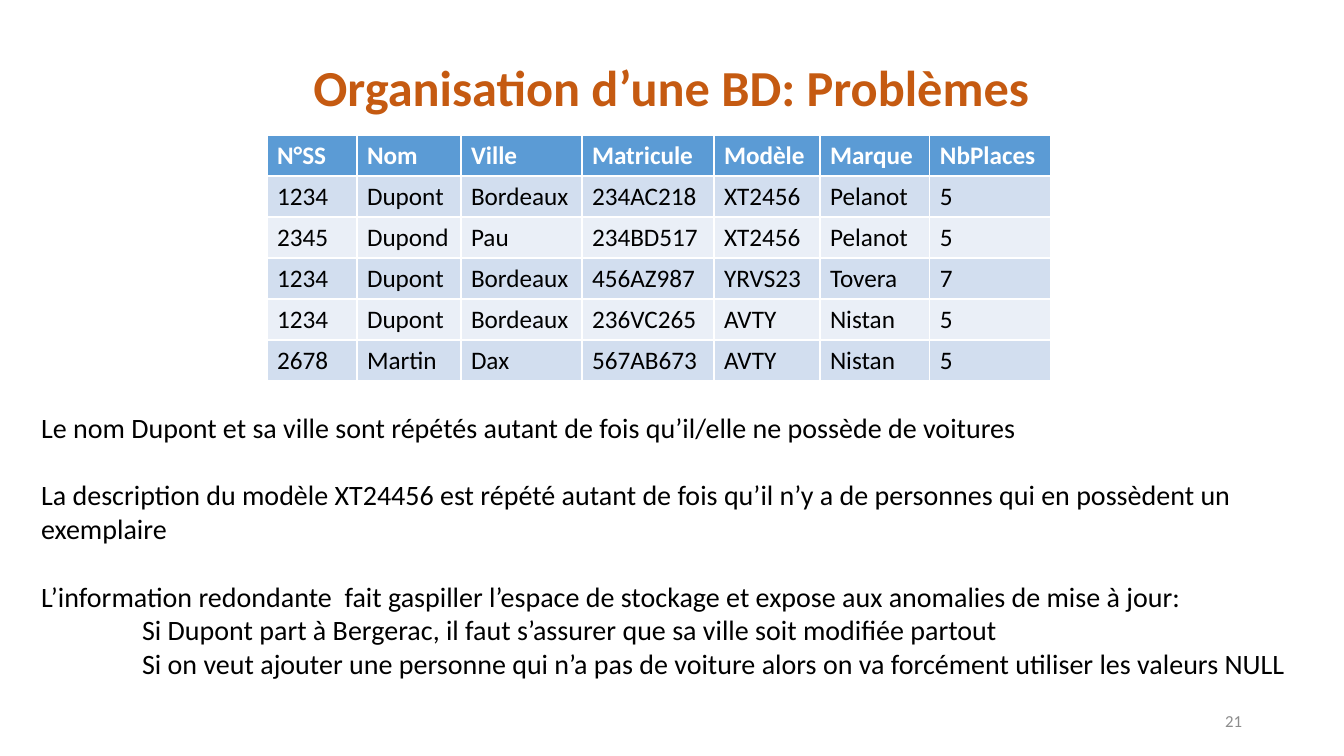
import pptx
import pptx.dml.color
import pptx.enum.text
import pptx.util
from lxml import etree

RGBColor = pptx.dml.color.RGBColor
PP_ALIGN = pptx.enum.text.PP_ALIGN
MSO_ANCHOR = pptx.enum.text.MSO_ANCHOR

WHITE = RGBColor(0xFF, 0xFF, 0xFF)
BLACK = RGBColor(0x00, 0x00, 0x00)
GREY = RGBColor(0x8C, 0x8C, 0x8C)
RUST = RGBColor(0xC5, 0x5A, 0x11)
HEADER_BLUE = RGBColor(0x5B, 0x9B, 0xD5)
BAND_DARK = RGBColor(0xD2, 0xDE, 0xEF)
BAND_LIGHT = RGBColor(0xEA, 0xEF, 0xF7)

CARS = [
    ("N°SS", "Nom", "Ville", "Matricule", "Modèle", "Marque", "NbPlaces"),
    ("1234", "Dupont", "Bordeaux", "234AC218", "XT2456", "Pelanot", "5"),
    ("2345", "Dupond", "Pau", "234BD517", "XT2456", "Pelanot", "5"),
    ("1234", "Dupont", "Bordeaux", "456AZ987", "YRVS23", "Tovera", "7"),
    ("1234", "Dupont", "Bordeaux", "236VC265", "AVTY", "Nistan", "5"),
    ("2678", "Martin", "Dax", "567AB673", "AVTY", "Nistan", "5"),
]
COLUMN_WIDTHS = [90, 104, 121, 132, 106, 110, 121]
ROW_HEIGHT = 41

# Each remark: text, left indent in px, space after in points
REMARKS = [
    ("Le nom Dupont et sa ville sont répétés autant de fois qu’il/elle "
     "ne possède de voitures", 0, 24.4),
    ("La description du modèle XT24456 est répété autant de fois qu’il n’y a "
     "de personnes qui en possèdent un exemplaire", 0, 24.4),
    ("L’information redondante  fait gaspiller l’espace de stockage et expose "
     "aux anomalies de mise à jour:", 0, 0),
    ("Si Dupont part à Bergerac, il faut s’assurer que sa ville soit "
     "modifiée partout", 101, 0),
    ("Si on veut ajouter une personne qui n’a pas de voiture alors on va "
     "forcément utiliser les valeurs NULL", 101, 0),
]


def px(count):
    return pptx.util.Inches(count / 100.8)


class SlideBuilder:
    font = "Calibri"

    def __init__(self, page):
        self.page = page

    def style(self, para, size, color, bold=False):
        for span in para.runs:
            span.font.name = self.font
            span.font.size = pptx.util.Pt(size)
            span.font.bold = bold
            span.font.color.rgb = color

    def place(self, box, left, top, width, height):
        box.left, box.top = px(left), px(top)
        box.width, box.height = px(width), px(height)

    def title(self, text, *bounds):
        box = self.page.shapes.title
        self.place(box, *bounds)
        frame = box.text_frame
        frame.text = text
        frame.auto_size = pptx.enum.text.MSO_AUTO_SIZE.NONE
        frame.vertical_anchor = MSO_ANCHOR.MIDDLE
        para = frame.paragraphs[0]
        para.alignment = PP_ALIGN.CENTER
        para.line_spacing = 0.9
        self.style(para, 36, RUST, bold=True)

    def table(self, rows, widths, left, top):
        grid = self.page.shapes.add_table(
            len(rows), len(widths), px(left), px(top),
            px(sum(widths)), px(ROW_HEIGHT * len(rows))).table
        for column, width in zip(grid.columns, widths):
            column.width = px(width)
        for index, values in enumerate(rows):
            header = index == 0
            band = BAND_DARK if index % 2 else BAND_LIGHT
            for cell, value in zip(grid.rows[index].cells, values):
                cell.text = value
                cell.fill.solid()
                cell.fill.fore_color.rgb = HEADER_BLUE if header else band
                self.style(cell.text_frame.paragraphs[0], 18,
                           WHITE if header else BLACK, bold=header)

    def body(self, remarks, *bounds):
        box = self.page.placeholders[1]
        self.place(box, *bounds)
        frame = box.text_frame
        frame.text = "\n".join(text for text, indent, gap in remarks)
        frame.auto_size = pptx.enum.text.MSO_AUTO_SIZE.NONE
        frame.vertical_anchor = MSO_ANCHOR.TOP
        for para, (text, indent, gap) in zip(frame.paragraphs, remarks):
            para.space_before = pptx.util.Pt(0)
            para.space_after = pptx.util.Pt(gap)
            self.style(para, 20, BLACK)
            self.remove_bullet(para, indent)

    def remove_bullet(self, para, indent):
        properties = para._p.get_or_add_pPr()
        properties.set("marL", str(px(indent)))
        properties.set("indent", "0")
        etree.SubElement(properties, pptx.oxml.ns.qn("a:buNone"))

    def page_number(self, text, *bounds):
        box = self.page.shapes.add_textbox(*map(px, bounds))
        frame = box.text_frame
        frame.word_wrap = True
        frame.text = text
        frame.vertical_anchor = MSO_ANCHOR.MIDDLE
        para = frame.paragraphs[0]
        para.alignment = PP_ALIGN.RIGHT
        self.style(para, 12, GREY)


def main():
    deck = pptx.Presentation()
    deck.slide_width, deck.slide_height = px(1344), px(756)
    builder = SlideBuilder(deck.slides.add_slide(deck.slide_layouts[1]))
    builder.title("Organisation d’une BD: Problèmes", 92, 40, 1159, 101)
    builder.table(CARS, COLUMN_WIDTHS, 267, 135)
    builder.page_number("21", 950, 701, 302, 40)
    builder.body(REMARKS, 31, 405, 1298, 281)
    deck.save("out.pptx")


if __name__ == "__main__":
    main()
